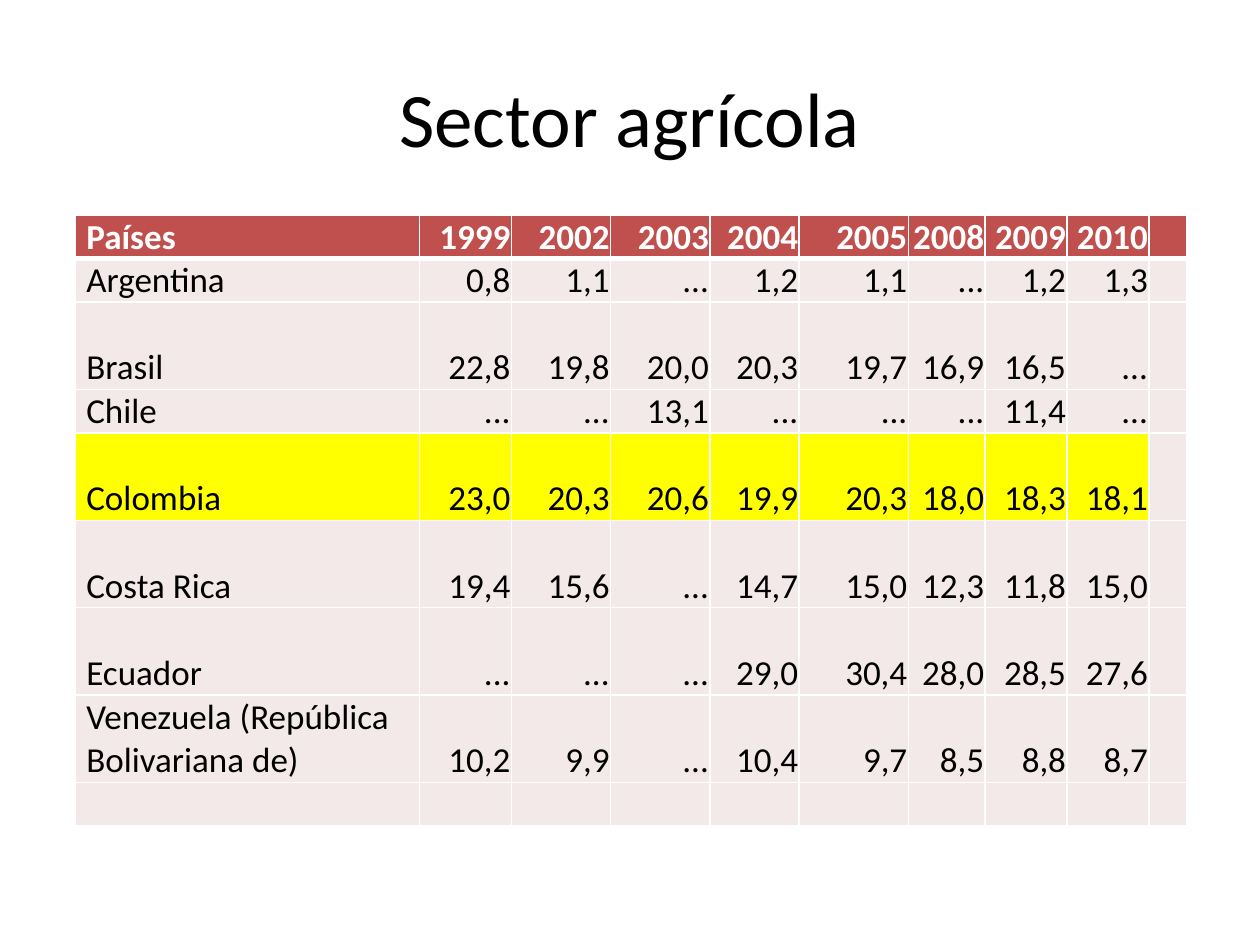
from dataclasses import dataclass

from lxml import etree
from pptx import Presentation
from pptx import util as u
from pptx.dml.color import RGBColor
from pptx.enum import text
from pptx.oxml import ns


@dataclass(frozen=True)
class Theme:
    font: str = "Calibri"
    title_size: int = 44
    table_size: int = 20
    ink: str = "000000"
    white: str = "FFFFFF"
    header: str = "C0504D"
    body: str = "F4E9E9"
    highlight: str = "FFFF00"
    thin: int = 1
    thick: int = 3


THEME = Theme()
ROW_UNIT = 0.88
COLUMN_WIDTHS = [6.95, 1.85, 2, 2, 1.8, 2.2, 1.55, 1.65, 1.65, 0.76]
HIGHLIGHTED = "Colombia"

ROWS = [
    (1, "Países", "1999 2002 2003 2004 2005 2008 2009 2010"),
    (1, "Argentina", "0,8 1,1 ... 1,2 1,1 ... 1,2 1,3"),
    (2, "Brasil", "22,8 19,8 20,0 20,3 19,7 16,9 16,5 ..."),
    (1, "Chile", "... ... 13,1 ... ... ... 11,4 ..."),
    (2, "Colombia", "23,0 20,3 20,6 19,9 20,3 18,0 18,3 18,1"),
    (2, "Costa Rica", "19,4 15,6 ... 14,7 15,0 12,3 11,8 15,0"),
    (2, "Ecuador", "... ... ... 29,0 30,4 28,0 28,5 27,6"),
    (2, "Venezuela (República Bolivariana de)",
     "10,2 9,9 ... 10,4 9,7 8,5 8,8 8,7"),
    (1, "", ""),
]


def add_run(p, content, size, color, bold=False):
    r = p.add_run()
    r.text = content
    r.font.name = THEME.font
    r.font.size = u.Pt(size)
    r.font.bold = bold
    r.font.color.rgb = RGBColor.from_string(color)


def add_title(s, content):
    sp = s.shapes.add_textbox(u.Cm(1.27), u.Cm(0.76), u.Cm(22.86), u.Cm(3.18))
    tf = sp.text_frame
    tf.word_wrap = True
    tf.vertical_anchor = text.MSO_ANCHOR.MIDDLE
    p = tf.paragraphs[0]
    p.alignment = text.PP_ALIGN.CENTER
    add_run(p, content, THEME.title_size, THEME.ink)


def set_borders(cell, top, bottom):
    tc_pr = cell._tc.get_or_add_tcPr()
    widths = {"L": THEME.thin, "R": THEME.thin, "T": top, "B": bottom}
    for i, (side, width) in enumerate(widths.items()):
        line = etree.Element(ns.qn(f"a:ln{side}"), w=str(u.Pt(width)))
        fill = etree.SubElement(line, ns.qn("a:solidFill"))
        etree.SubElement(fill, ns.qn("a:srgbClr"), val=THEME.white)
        tc_pr.insert(i, line)


def fill_cell(cell, content, fill, is_header, is_label):
    cell.fill.solid()
    cell.fill.fore_color.rgb = RGBColor.from_string(fill)
    cell.vertical_anchor = text.MSO_ANCHOR.BOTTOM
    cell.margin_left = u.Cm(0.23 if is_label else 0.02)
    cell.margin_right = cell.margin_top = u.Cm(0.02)
    cell.margin_bottom = 0
    p = cell.text_frame.paragraphs[0]
    p.alignment = text.PP_ALIGN.LEFT if is_label else text.PP_ALIGN.RIGHT
    if content:
        color = THEME.white if is_header else THEME.ink
        add_run(p, content, THEME.table_size, color, is_header)


def row_fill(row, label):
    if row == 0:
        return THEME.header
    return THEME.highlight if label == HIGHLIGHTED else THEME.body


def add_data_table(s):
    height = ROW_UNIT * sum(units for units, _, _ in ROWS)
    frame = s.shapes.add_table(
        len(ROWS), len(COLUMN_WIDTHS), u.Cm(1.51), u.Cm(4.33),
        u.Cm(sum(COLUMN_WIDTHS)), u.Cm(height))
    table = frame.table
    for column, width in zip(table.columns, COLUMN_WIDTHS):
        column.width = u.Cm(width)
    last = len(COLUMN_WIDTHS) - 1
    for i, (units, label, values) in enumerate(ROWS):
        table.rows[i].height = u.Cm(units * ROW_UNIT)
        contents = [label] + values.split()
        top = THEME.thick if i == 1 else THEME.thin
        bottom = THEME.thick if i == 0 else THEME.thin
        for j in range(last + 1):
            cell = table.cell(i, j)
            content = contents[j] if j < len(contents) else ""
            fill = row_fill(i, "" if j == last else label)
            fill_cell(cell, content, fill, i == 0, j == 0)
            set_borders(cell, top, bottom)


def main():
    prs = Presentation()
    prs.slide_width, prs.slide_height = u.Cm(25.4), u.Cm(19.05)
    s = prs.slides.add_slide(prs.slide_layouts[6])
    add_title(s, "Sector agrícola")
    add_data_table(s)
    prs.save("out.pptx")


if __name__ == "__main__":
    main()
